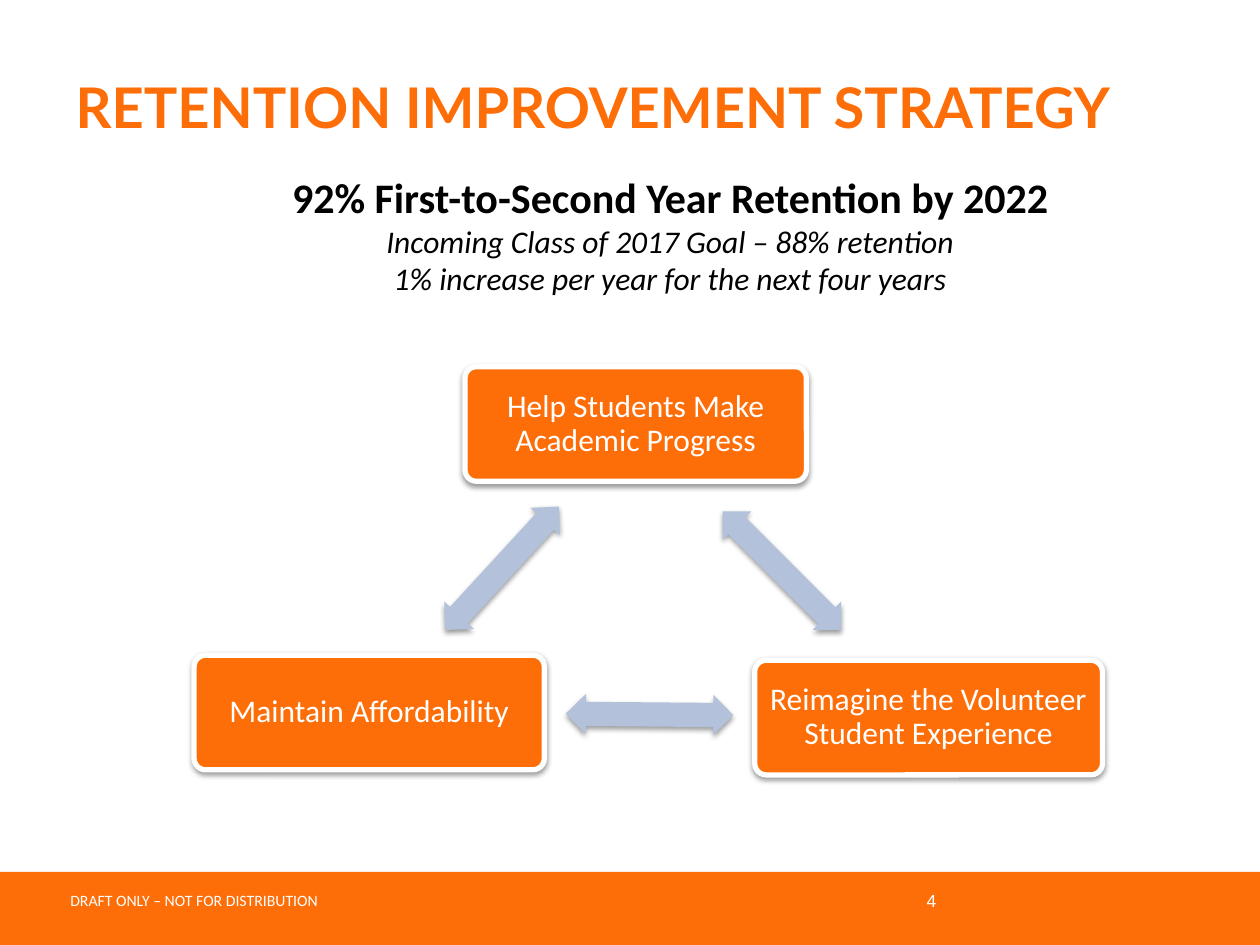
import pptx
import pptx.util
import pptx.dml.color
import pptx.enum.shapes
import pptx.enum.text
import pptx.oxml

Inches, Pt = pptx.util.Inches, pptx.util.Pt
RGB = pptx.dml.color.RGBColor.from_string
SHAPE = pptx.enum.shapes.MSO_SHAPE
ALIGN = pptx.enum.text.PP_ALIGN
MIDDLE = pptx.enum.text.MSO_ANCHOR.MIDDLE
COLORS = {"orange": "FD6D08", "white": "FFFFFF", "arrow": "B3C1DB", "black": "000000"}
SHADOW = (
    '<a:outerShdw xmlns:a="http://schemas.openxmlformats.org/drawingml/2006/main" '
    'blurRad="39370" dist="20320" dir="5400000" rotWithShape="0">'
    '<a:srgbClr val="000000"><a:alpha val="38000"/></a:srgbClr></a:outerShdw>'
)


def add_filled(kind, box, color, shadow=True):
    """Add a filled preset shape without outline, with a soft shadow if asked."""
    sp = s.shapes.add_shape(kind, *[Inches(v) for v in box])
    sp.fill.solid()
    sp.fill.fore_color.rgb = RGB(COLORS[color])
    sp.line.fill.background()
    sp.shadow.inherit = False
    if shadow:
        effects = sp._element.spPr.find(pptx.oxml.ns.qn("a:effectLst"))
        effects.append(pptx.oxml.parse_xml(SHADOW))
    return sp


def format_text(p, size, color, font="Calibri", align=ALIGN.LEFT, bold=False, italic=False):
    p.alignment = align
    for r in p.runs:
        r.font.name, r.font.size = font, Pt(size)
        r.font.bold, r.font.italic = bold, italic
        r.font.color.rgb = RGB(COLORS[color])


prs = pptx.Presentation()
prs.slide_width, prs.slide_height = Inches(10), Inches(7.5)
s = prs.slides.add_slide(prs.slide_layouts[5])

# Title
title = s.shapes.title
title.left, title.top, title.width, title.height = [Inches(v) for v in (0.5, 0.22, 9, 1.25)]
tf = title.text_frame
tf.text = "RETENTION IMPROVEMENT STRATEGY"
tf.vertical_anchor = MIDDLE
format_text(tf.paragraphs[0], 32, "orange", font="Lato", bold=True)

# Footer band
add_filled(SHAPE.RECTANGLE, (0, 6.92, 10, 0.58), "orange", shadow=False)
tf = s.shapes.add_textbox(Inches(0.46), Inches(7.02), Inches(2.2), Inches(0.25)).text_frame
tf.text = "DRAFT ONLY – NOT FOR DISTRIBUTION"
format_text(tf.paragraphs[0], 9, "white")
tf = s.shapes.add_textbox(Inches(5.2), Inches(6.95), Inches(2.33), Inches(0.4)).text_frame
tf.word_wrap = True
tf.vertical_anchor = MIDDLE
tf.text = "4"
format_text(tf.paragraphs[0], 10, "white", font="Arial", align=ALIGN.RIGHT)

# Strategy boxes
strategies = [
    ("Help Students Make Academic Progress", 3.69, 2.91, 2.71),
    ("Reimagine the Volunteer Student Experience", 5.99, 5.24, 2.76),
    ("Maintain Affordability", 1.54, 5.2, 2.78),
]
for text, left, top, width in strategies:
    sp = add_filled(SHAPE.ROUNDED_RECTANGLE, (left, top, width, 0.91), "orange")
    sp.adjustments[0] = 0.1
    sp.line.color.rgb = RGB(COLORS["white"])
    sp.line.width = Pt(3)
    tf = sp.text_frame
    tf.word_wrap = True
    tf.vertical_anchor = MIDDLE
    tf.margin_left = tf.margin_right = tf.margin_top = tf.margin_bottom = Inches(0.07)
    tf.text = text
    p = tf.paragraphs[0]
    p.line_spacing = 0.9
    format_text(p, 18, "white", align=ALIGN.CENTER)

# Arrows linking the boxes
for left, top, angle in [(5.54, 4.37, 45), (4.49, 5.51, 180.5), (3.32, 4.35, 312.6)]:
    sp = add_filled(SHAPE.LEFT_RIGHT_ARROW, (left, top, 1.33, 0.32), "arrow")
    sp.adjustments[0], sp.adjustments[1] = 0.6, 0.5
    sp.rotation = angle

# Goal
tf = s.shapes.add_textbox(Inches(0.64), Inches(1.31), Inches(9.36), Inches(1.11)).text_frame
tf.word_wrap = True
tf.text = (
    "92% First-to-Second Year Retention by 2022\n"
    "Incoming Class of 2017 Goal – 88% retention\n"
    "1% increase per year for the next four years"
)
headline, *details = tf.paragraphs
format_text(headline, 24, "black", align=ALIGN.CENTER, bold=True)
for p in details:
    format_text(p, 18, "black", align=ALIGN.CENTER, italic=True)

prs.save("out.pptx")
